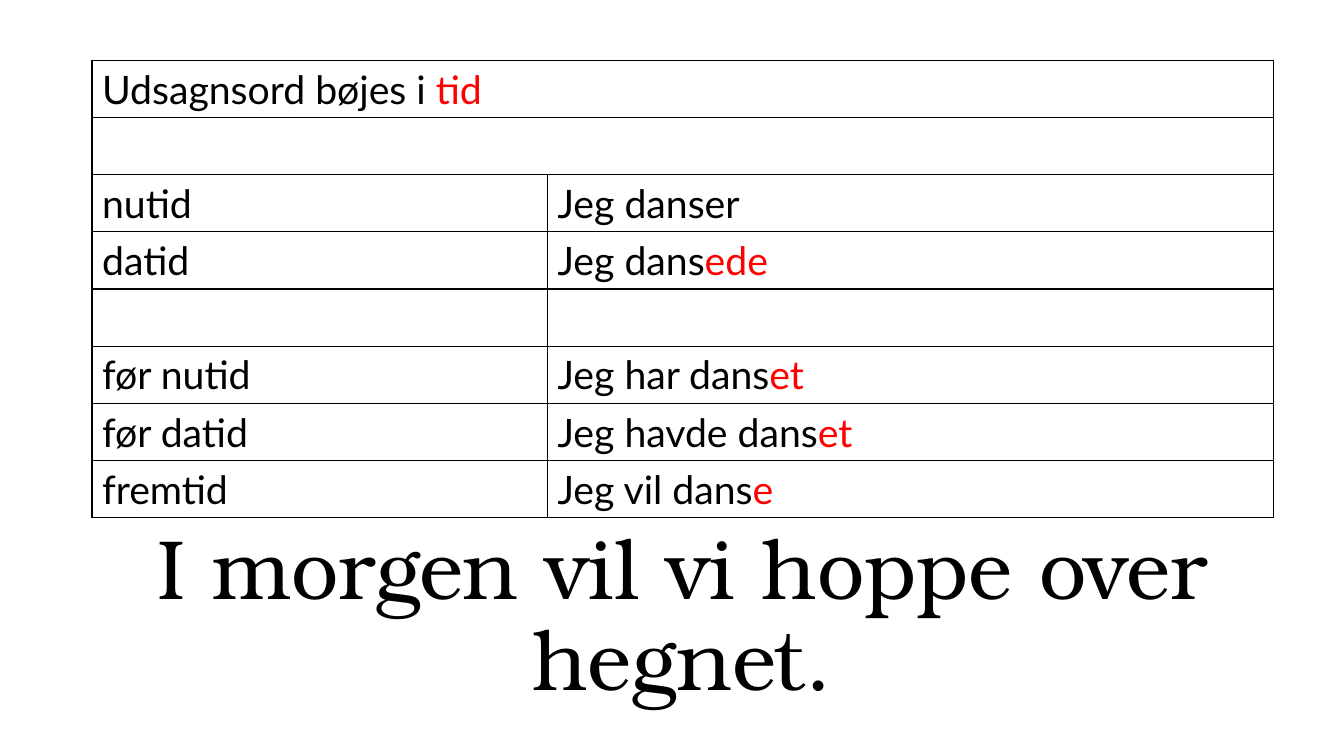
"""Build a slide with a Danish verb tense table and an example sentence."""
from typing import NamedTuple

from lxml import etree
from pptx import Presentation, util as u
from pptx.dml import color
from pptx.enum import text
from pptx.oxml import ns

HUES = {"ink": "000000", "mark": "FF0000"}
SIDES = ("lnL", "lnR", "lnT", "lnB")
HIGH = u.Cm(1.44)


class Tense(NamedTuple):
    name: str = ""
    stem: str = ""
    end: str = ""


TITLE = ("Udsagnsord bøjes i ", "tid")
ROWS = [
    Tense("nutid", "Jeg danser"),
    Tense("datid", "Jeg dans", "ede"),
    Tense(),
    Tense("før nutid", "Jeg har dans", "et"),
    Tense("før datid", "Jeg havde dans", "et"),
    Tense("fremtid", "Jeg vil dans", "e"),
]


def hue(key: str) -> color.RGBColor:
    return color.RGBColor.from_string(HUES[key])


def frame(cell) -> None:
    props = cell._tc.get_or_add_tcPr()
    for side in SIDES:
        line = etree.SubElement(props, ns.qn(f"a:{side}"), w=str(u.Pt(1)))
        fill = etree.SubElement(line, ns.qn("a:solidFill"))
        etree.SubElement(fill, ns.qn("a:srgbClr"), val=HUES["ink"])
    cell.fill.background()


def write(cell, stem: str, end: str = "") -> None:
    para = cell.text_frame.paragraphs[0]
    para.font.size, para.font.name = u.Pt(28), "Lato"
    for part, key in ((stem, "ink"), (end, "mark")):
        if part:
            run = para.add_run()
            run.text = part
            run.font.color.rgb = hue(key)


def add_tenses(slide) -> None:
    count = len(ROWS) + 2
    table = slide.shapes.add_table(
        count, 2, u.Cm(2.32), u.Cm(1.52), u.Cm(29.77), HIGH * count).table
    table.first_row = table.horz_banding = False
    for col, width in zip(table.columns, (11.48, 18.29)):
        col.width = u.Cm(width)
    for row in table.rows:
        row.height = HIGH
    for cell in table.iter_cells():
        frame(cell)
    for top in range(2):
        table.cell(top, 0).merge(table.cell(top, 1))
    write(table.cell(0, 0), *TITLE)
    for num, tense in enumerate(ROWS, 2):
        write(table.cell(num, 0), tense.name)
        write(table.cell(num, 1), tense.stem, tense.end)


def add_quote(slide, words: str) -> None:
    box = slide.shapes.add_textbox(
        u.Cm(2.59), u.Cm(12.88), u.Cm(29.21), u.Cm(5.38)).text_frame
    box.word_wrap = True
    box.vertical_anchor = text.MSO_ANCHOR.MIDDLE
    para = box.paragraphs[0]
    para.text = words
    para.alignment = text.PP_ALIGN.CENTER
    para.line_spacing = 0.9
    para.font.size, para.font.name = u.Pt(60), "TeX Gyre Bonum"
    para.font.color.rgb = hue("ink")


def main() -> None:
    deck = Presentation()
    deck.slide_width, deck.slide_height = u.Cm(33.87), u.Cm(19.05)
    slide = deck.slides.add_slide(deck.slide_layouts[6])
    add_quote(slide, "I morgen vil vi hoppe over hegnet.")
    add_tenses(slide)
    deck.save("out.pptx")


if __name__ == "__main__":
    main()
